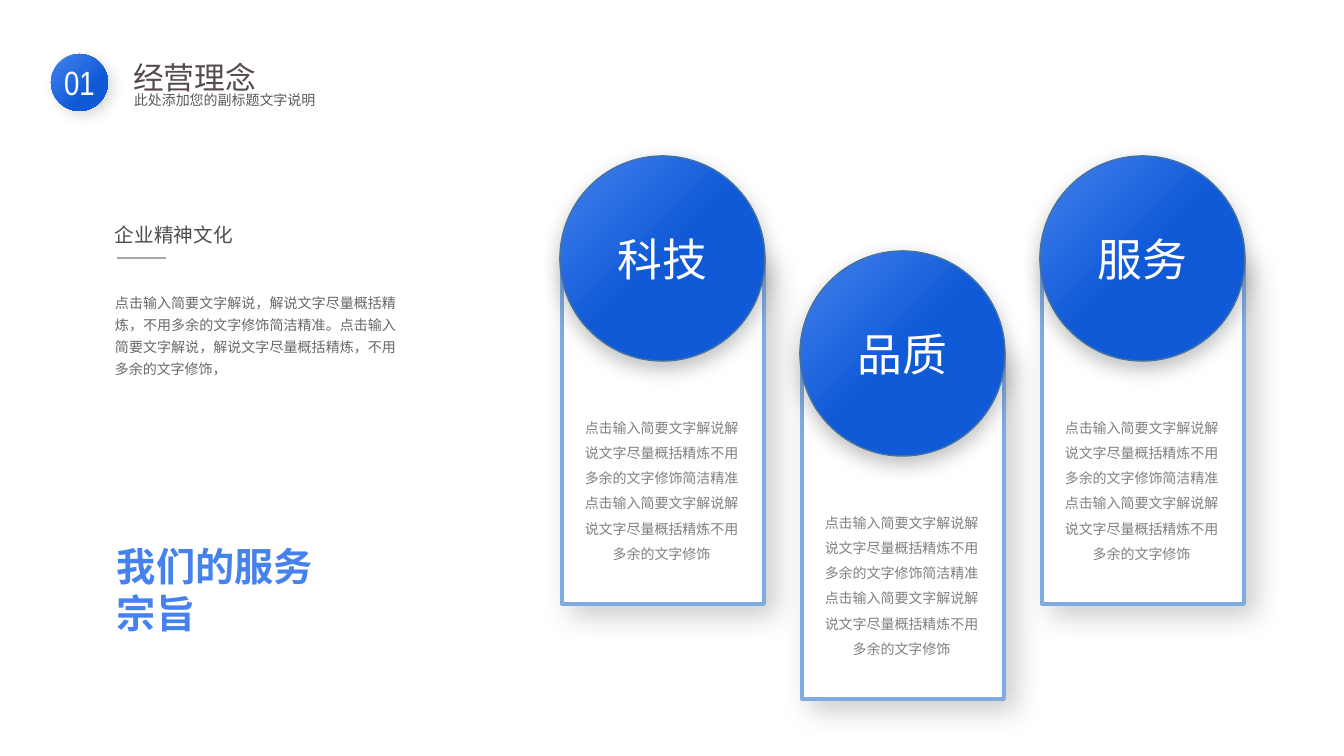
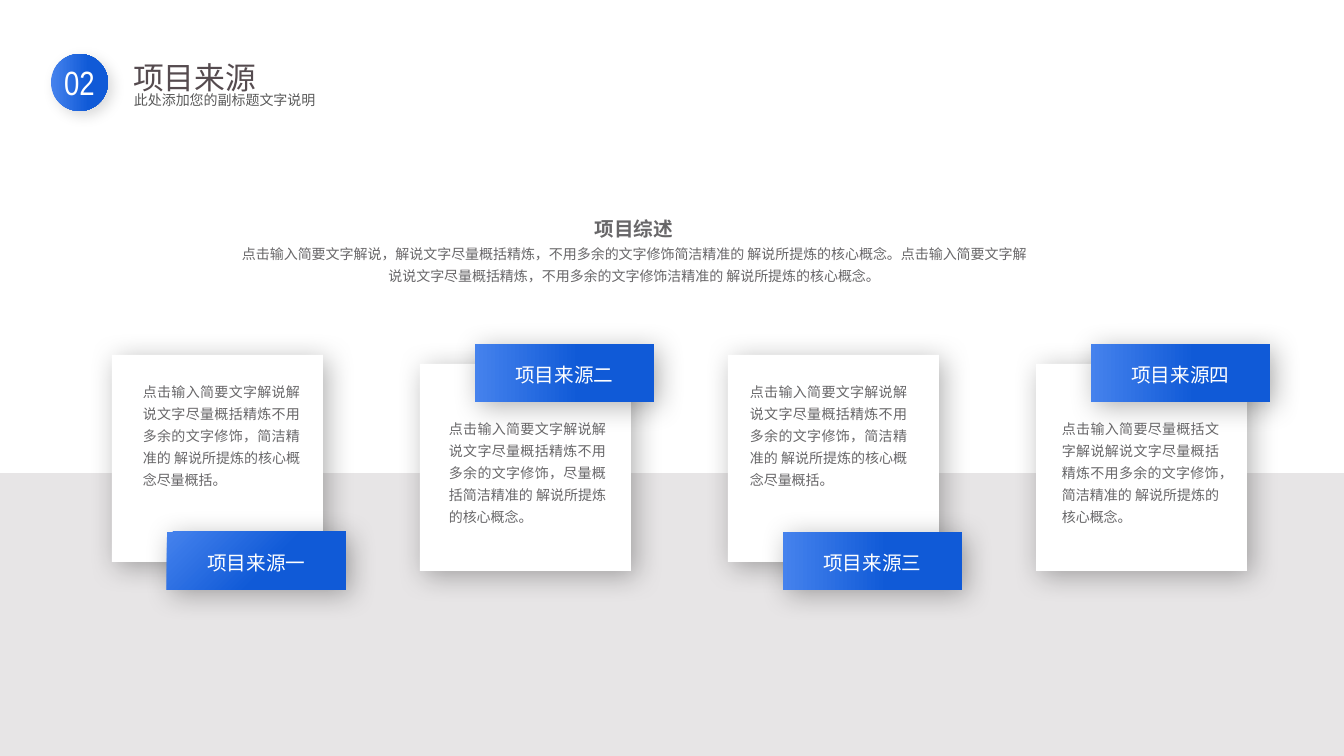
from dataclasses import dataclass
from typing import NamedTuple

from lxml.etree import SubElement
from pptx import Presentation
from pptx.dml.color import RGBColor
from pptx.enum.shapes import MSO_CONNECTOR, MSO_SHAPE
from pptx.enum.text import MSO_ANCHOR, MSO_AUTO_SIZE, PP_ALIGN
from pptx.oxml.ns import qn
from pptx.util import Emu, Pt

# Colours and fonts
WHITE = RGBColor(0xFF, 0xFF, 0xFF)
LIGHT_BLUE = RGBColor(0x45, 0x82, 0xED)
DEEP_BLUE = RGBColor(0x10, 0x5A, 0xD7)
RING_BLUE = RGBColor(0x43, 0x73, 0x9E)
FRAME_BLUE = RGBColor(0x7F, 0xAB, 0xE0)
BAND_GREY = RGBColor(0xE7, 0xE5, 0xE6)
RULE_GREY = RGBColor(0xA6, 0xA6, 0xA6)
TITLE_GREY = RGBColor(0x55, 0x4B, 0x4F)
SUBTITLE_GREY = RGBColor(0x59, 0x59, 0x59)
HEADING_GREY = RGBColor(0x4F, 0x4D, 0x50)
BODY_GREY = RGBColor(0x68, 0x67, 0x69)
PILLAR_GREY = RGBColor(0x80, 0x80, 0x80)
CJK_FONT = "Noto Sans CJK SC"
NUMBER_FONT = "Arial Narrow"

SUBTITLE = "此处添加您的副标题文字说明"
LINE_HEIGHT = 1.2  # single line spacing, in font sizes


class Box(NamedTuple):
    x: int
    y: int
    w: int
    h: int


class Shadow(NamedTuple):
    alpha: int
    blur: int
    dist: int
    angle: int


class Gradient(NamedTuple):
    start: int
    stop: int
    angle: int


@dataclass(frozen=True)
class Style:
    size: int
    color: RGBColor
    align: PP_ALIGN = PP_ALIGN.LEFT
    spacing: float | None = None
    bold: bool = False
    font: str = CJK_FONT


@dataclass(frozen=True)
class Pillar:
    name: str
    drop: int


@dataclass(frozen=True)
class Card:
    label: str
    body: str
    body_inset: int
    label_below: bool
    angle: int = 0


NUMBER_SHADOW = Shadow(15, 10, 5, 45)
FRAME_SHADOW = Shadow(20, 20, 10, 45)
DISC_SHADOW = Shadow(25, 15, 5, 90)
CARD_SHADOW = Shadow(30, 20, 5, 45)

TITLE = Style(22, TITLE_GREY, spacing=1.3)
SUBTITLE_STYLE = Style(10, SUBTITLE_GREY, spacing=1.3)
NUMBER = Style(24, WHITE, PP_ALIGN.CENTER, font=NUMBER_FONT)
DISC = Style(32, WHITE, PP_ALIGN.CENTER)
PILLAR_BODY = Style(10, PILLAR_GREY, PP_ALIGN.CENTER, 1.5)
SLOGAN = Style(28, LIGHT_BLUE, spacing=1.0, bold=True)
HEADING = Style(14, HEADING_GREY, spacing=1.3)
BODY = Style(10, BODY_GREY, PP_ALIGN.JUSTIFY, 1.3)
SUMMARY_HEAD = Style(14, BODY_GREY, PP_ALIGN.CENTER, 1.3, True)
SUMMARY_BODY = Style(10, BODY_GREY, PP_ALIGN.CENTER, 1.3)
LABEL = Style(14, WHITE, PP_ALIGN.CENTER)

PILLAR_TEXT = (
    "点击输入简要文字解说解说文字尽量概括精炼不用多余的文字修饰简洁精准"
    "点击输入简要文字解说解说文字尽量概括精炼不用多余的文字修饰"
)
PILLARS = [Pillar("科技", 0), Pillar("品质", 95), Pillar("服务", 0)]

CULTURE_TEXT = (
    "点击输入简要文字解说，解说文字尽量概括精炼，不用多余的文字修饰简洁精准。"
    "点击输入简要文字解说，解说文字尽量概括精炼，不用多余的文字修饰，"
)
SUMMARY_TEXT = (
    "点击输入简要文字解说，解说文字尽量概括精炼，不用多余的文字修饰简洁精准的 "
    "解说所提炼的核心概念。点击输入简要文字解说说文字尽量概括精炼，"
    "不用多余的文字修饰洁精准的 解说所提炼的核心概念。"
)
ODD_TEXT = (
    "点击输入简要文字解说解说文字尽量概括精炼不用多余的文字修饰，"
    "简洁精准的 解说所提炼的核心概念尽量概括。"
)
CARDS = [
    Card("项目来源一", ODD_TEXT, 21, True, 45),
    Card("项目来源二",
         "点击输入简要文字解说解说文字尽量概括精炼不用多余的文字修饰，"
         "尽量概括简洁精准的 解说所提炼的核心概念。", 19, False),
    Card("项目来源三", ODD_TEXT, 12, True),
    Card("项目来源四",
         "点击输入简要尽量概括文字解说解说文字尽量概括精炼不用多余的文字修饰，"
         "简洁精准的 解说所提炼的核心概念。", 16, False),
]


# Drawing helpers
def px(n: int) -> Emu:
    return Emu(round(n * 914400 / 100.8))


def write(tf, lines: list[tuple[str, Style]]) -> None:
    """Fill a text frame with one styled paragraph per line."""
    for i, (text, style) in enumerate(lines):
        p = tf.paragraphs[0] if i == 0 else tf.add_paragraph()
        p.alignment = style.align
        if style.spacing:
            p.line_spacing = Pt(round(style.size * LINE_HEIGHT * style.spacing, 1))
        r = p.add_run()
        r.text = text
        fmt = {"name": style.font, "size": Pt(style.size), "bold": style.bold}
        for key, value in fmt.items():
            setattr(r.font, key, value)
        r.font.color.rgb = style.color
        SubElement(r._r.get_or_add_rPr(), qn("a:ea"), typeface=style.font)


def place(sp, box: Box) -> None:
    for key, value in zip(("left", "top", "width", "height"), box):
        setattr(sp, key, px(value))


def add_text(s, box: Box, *lines: tuple[str, Style]) -> None:
    tf = s.shapes.add_textbox(*map(px, box)).text_frame
    tf.word_wrap = True
    write(tf, list(lines))


def add_shadow(sp, shadow: Shadow) -> None:
    effects = sp._element.spPr.find(qn("a:effectLst"))
    outer = SubElement(
        effects, qn("a:outerShdw"), blurRad=str(Pt(shadow.blur)),
        dist=str(Pt(shadow.dist)), dir=str(shadow.angle * 60000),
        algn="ctr", rotWithShape="0")
    clr = SubElement(outer, qn("a:srgbClr"), val="000000")
    SubElement(clr, qn("a:alpha"), val=str(shadow.alpha * 1000))


def add_figure(s, kind: MSO_SHAPE, box: Box, fill: RGBColor | Gradient,
               shadow: Shadow | None = None,
               line: tuple[RGBColor, float] | None = None):
    sp = s.shapes.add_shape(kind, *map(px, box))
    if isinstance(fill, Gradient):
        sp.fill.gradient()
        sp.fill.gradient_angle = -fill.angle % 360
        ends = ((fill.start, LIGHT_BLUE), (fill.stop, DEEP_BLUE))
        for stop, (position, color) in zip(sp.fill.gradient_stops, ends):
            stop.position = position / 100
            stop.color.rgb = color
    else:
        sp.fill.solid()
        sp.fill.fore_color.rgb = fill
    if line:
        sp.line.color.rgb, sp.line.width = line[0], Pt(line[1])
    else:
        sp.line.fill.background()
    sp.shadow.inherit = False
    if shadow:
        add_shadow(sp, shadow)
    return sp


def add_caption(sp, text: str, style: Style, **fmt) -> None:
    """Write centred text inside a shape."""
    tf = sp.text_frame
    for key, value in {"vertical_anchor": MSO_ANCHOR.MIDDLE, **fmt}.items():
        setattr(tf, key, value)
    write(tf, [(text, style)])


def new_slide(prs, number: str, title: str, angle: int):
    """Add a slide with the shared numbered header."""
    s = prs.slides.add_slide(prs.slide_layouts[5])
    place(s.shapes.title, Box(123, 43, 300, 58))
    tf = s.shapes.title.text_frame
    fmt = {"vertical_anchor": MSO_ANCHOR.TOP, "word_wrap": True,
           "auto_size": MSO_AUTO_SIZE.NONE}
    for key, value in fmt.items():
        setattr(tf, key, value)
    write(tf, [(title, TITLE)])
    add_text(s, Box(124, 82, 341, 32), (SUBTITLE, SUBTITLE_STYLE))
    disc = add_figure(s, MSO_SHAPE.OVAL, Box(51, 54, 57, 57),
                      Gradient(1, 66, angle), NUMBER_SHADOW)
    add_caption(disc, number, NUMBER, word_wrap=False)
    return s


# Slide parts
def add_pillar(s, x: int, pillar: Pillar) -> None:
    y = 156 + pillar.drop
    add_figure(s, MSO_SHAPE.RECTANGLE, Box(x + 2, y + 100, 202, 348), WHITE,
               FRAME_SHADOW, (FRAME_BLUE, 2.75))
    disc = add_figure(s, MSO_SHAPE.OVAL, Box(x, y, 205, 205),
                      Gradient(0, 50, 45), DISC_SHADOW, (RING_BLUE, 1))
    add_caption(disc, pillar.name, DISC)
    add_text(s, Box(x + 11, y + 250, 181, 214), (PILLAR_TEXT, PILLAR_BODY))


def add_card(s, x: int, card: Card) -> None:
    card_y, label_y, body_y = (355, 532, 374) if card.label_below else (364, 344, 411)
    add_figure(s, MSO_SHAPE.RECTANGLE, Box(x, card_y, 211, 207), WHITE, CARD_SHADOW)
    label = add_figure(s, MSO_SHAPE.RECTANGLE, Box(x + 55, label_y, 179, 58),
                       Gradient(0, 58, card.angle), CARD_SHADOW)
    add_caption(label, card.label, LABEL, margin_top=px(8))
    add_text(s, Box(x + card.body_inset, body_y, 177, 120), (card.body, BODY))


def build_philosophy(prs) -> None:
    s = new_slide(prs, "01", "经营理念", 45)
    for i, pillar in enumerate(PILLARS):
        add_pillar(s, 560 + 240 * i, pillar)
    add_text(s, Box(107, 537, 424, 146), ("我们的服务", SLOGAN), ("宗旨", SLOGAN))
    add_text(s, Box(105, 285, 301, 142), (CULTURE_TEXT, BODY))
    add_text(s, Box(105, 211, 146, 41), ("企业精神文化", HEADING))
    rule = s.shapes.add_connector(MSO_CONNECTOR.STRAIGHT, px(117), px(258),
                                  px(166), px(258))
    rule.line.color.rgb, rule.line.width = RULE_GREY, Pt(1.5)
    SubElement(rule._element.spPr, qn("a:effectLst"))


def build_sources(prs) -> None:
    s = new_slide(prs, "02", "项目来源", 0)
    add_figure(s, MSO_SHAPE.RECTANGLE, Box(0, 473, 1344, 283), BAND_GREY)
    add_text(s, Box(232, 205, 804, 109),
             ("项目综述", SUMMARY_HEAD), (SUMMARY_TEXT, SUMMARY_BODY))
    for i, card in enumerate(CARDS):
        add_card(s, 112 + 308 * i, card)


def main() -> None:
    prs = Presentation()
    prs.slide_width, prs.slide_height = px(1344), px(756)
    build_philosophy(prs)
    build_sources(prs)
    prs.save("out.pptx")


if __name__ == "__main__":
    main()
